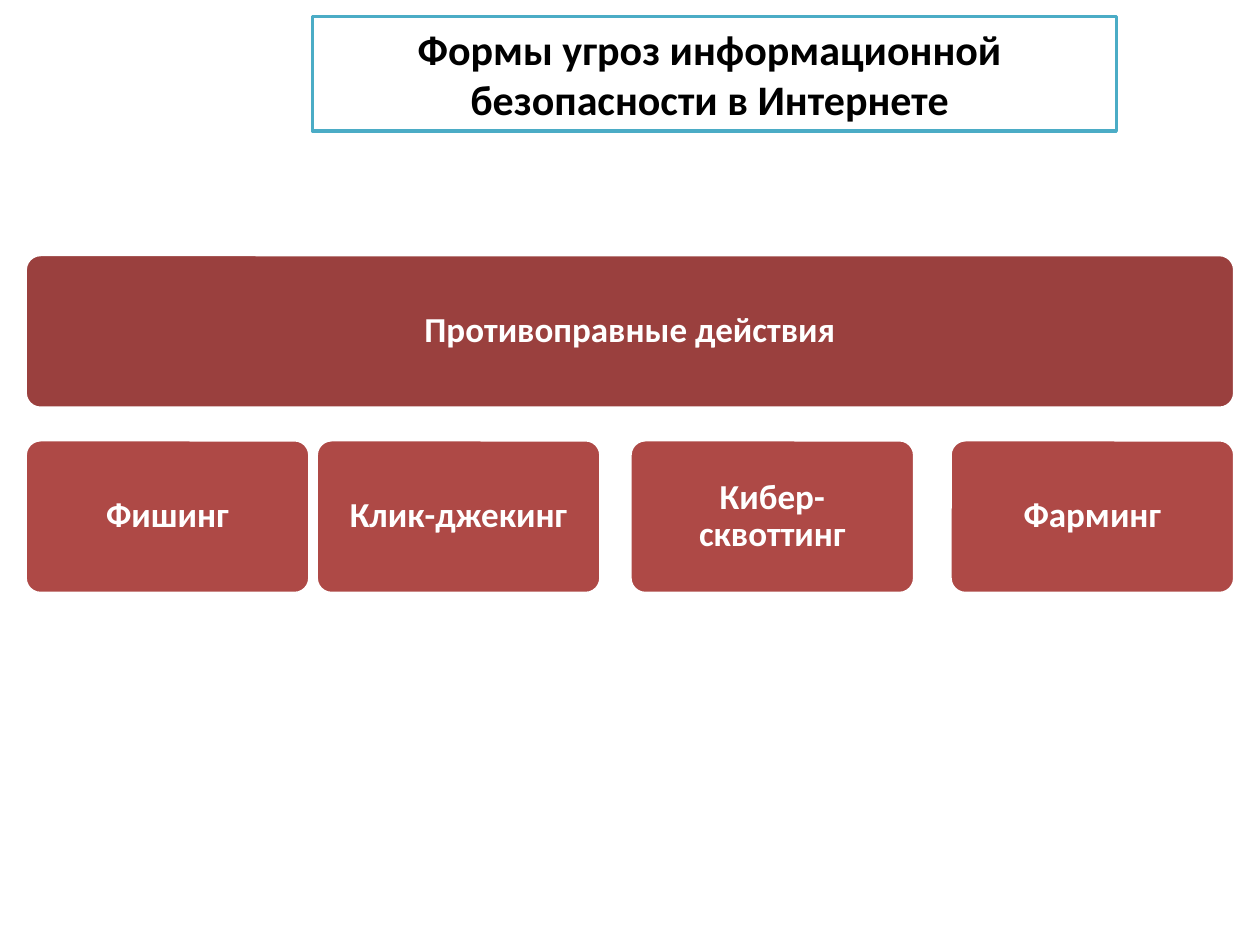
"""Build a slide on the forms of information security threats on the Internet."""
import enum

import pptx
import pptx.dml.color
import pptx.enum.shapes
import pptx.enum.text
import pptx.util

Inches = pptx.util.Inches
Pt = pptx.util.Pt
Shapes = pptx.enum.shapes.MSO_SHAPE


class Theme(enum.Enum):
    FONT = "Calibri"
    WHITE = pptx.dml.color.RGBColor.from_string("FFFFFF")
    BLACK = pptx.dml.color.RGBColor.from_string("000000")
    TEAL = pptx.dml.color.RGBColor.from_string("4BACC6")
    DARK_RED = pptx.dml.color.RGBColor.from_string("9A403E")
    RED = pptx.dml.color.RGBColor.from_string("AE4946")
    TITLE_SIZE = Pt(24)
    CARD_SIZE = Pt(20)
    BORDER = Pt(2)


def add_panel(slide, preset, bounds, fill, border, lines, size, ink):
    panel = slide.shapes.add_shape(preset, *map(Inches, bounds))
    panel.shadow.inherit = False
    panel.fill.solid()
    panel.fill.fore_color.rgb = fill.value
    panel.line.color.rgb = border.value
    panel.line.width = Theme.BORDER.value
    frame = panel.text_frame
    frame.word_wrap = True
    frame.vertical_anchor = pptx.enum.text.MSO_ANCHOR.MIDDLE
    for index, line in enumerate(lines):
        paragraph = frame.add_paragraph() if index else frame.paragraphs[0]
        paragraph.alignment = pptx.enum.text.PP_ALIGN.CENTER
        run = paragraph.add_run()
        run.text = line
        run.font.name = Theme.FONT.value
        run.font.size = size.value
        run.font.bold = True
        run.font.color.rgb = ink.value
    return panel


def add_card(slide, bounds, fill, label):
    card = add_panel(slide, Shapes.ROUNDED_RECTANGLE, bounds, fill, Theme.WHITE,
                     [label], Theme.CARD_SIZE, Theme.WHITE)
    card.adjustments[0] = 0.1
    card.text_frame.margin_left = card.text_frame.margin_right = Inches(0.1)
    card.text_frame.paragraphs[0].line_spacing = 0.9


deck = pptx.Presentation()
deck.slide_width = Inches(10)
deck.slide_height = Inches(7.5)
slide = deck.slides.add_slide(deck.slide_layouts[6])

card_height = 1.22
add_card(slide, (0.2, 2.02, 9.6, card_height), Theme.DARK_RED, "Противоправные действия")

threats = {"Фишинг": 0.2, "Клик-джекинг": 2.51, "Кибер-сквоттинг": 5, "Фарминг": 7.54}
for threat, left in threats.items():
    add_card(slide, (left, 3.49, 2.26, card_height), Theme.RED, threat)

title_lines = ["Формы угроз информационной ", "безопасности в Интернете "]
add_panel(slide, Shapes.RECTANGLE, (2.48, 0.13, 6.38, 0.91), Theme.WHITE, Theme.TEAL,
          title_lines, Theme.TITLE_SIZE, Theme.BLACK)

deck.save("out.pptx")
